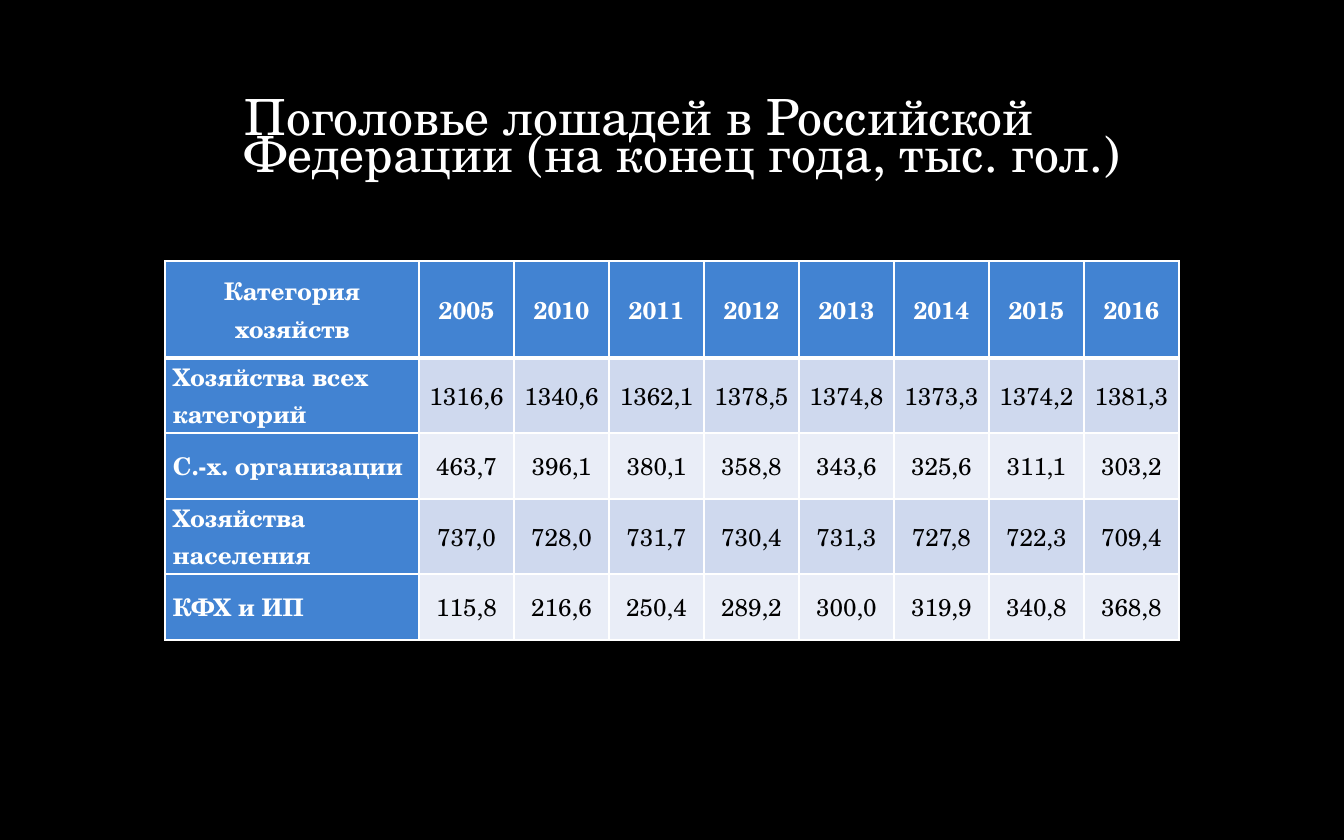
"""Build a slide with a table of horse numbers in Russia by farm category."""
import lxml.etree
import pptx
import pptx.dml.color
import pptx.enum.text
import pptx.oxml.ns
import pptx.util

EMU_PER_PX = 914400 / 134.4
FONT = "TeX Gyre Schola"
WHITE, BLACK, BLUE = "FFFFFF", "000000", "4283D2"
BANDS = ["CFD9EE", "E9EDF7"]
TITLE = "Поголовье лошадей в Российской Федерации (на конец года, тыс. гол.)"
HERD = [
    ["Категория хозяйств", "2005", "2010", "2011", "2012", "2013", "2014", "2015", "2016"],
    ["Хозяйства всех категорий", "1316,6", "1340,6", "1362,1", "1378,5", "1374,8", "1373,3", "1374,2", "1381,3"],
    ["С.-х. организации", "463,7", "396,1", "380,1", "358,8", "343,6", "325,6", "311,1", "303,2"],
    ["Хозяйства населения", "737,0", "728,0", "731,7", "730,4", "731,3", "727,8", "722,3", "709,4"],
    ["КФХ и ИП", "115,8", "216,6", "250,4", "289,2", "300,0", "319,9", "340,8", "368,8"],
]
COLUMN_WIDTHS = [254] + [95] * 8
ROW_HEIGHTS = [97, 75, 66, 75, 66]


def px(length):
    return pptx.util.Emu(round(length * EMU_PER_PX))


def rgb(value):
    return pptx.dml.color.RGBColor.from_string(value)


def style_font(paragraph, size, color, bold=False):
    font = paragraph.font
    font.name = FONT
    font.size = pptx.util.Pt(size)
    font.bold = bold
    font.color.rgb = rgb(color)


def add_border(cell, side, width):
    properties = cell._tc.get_or_add_tcPr()
    line = lxml.etree.SubElement(properties, pptx.oxml.ns.qn(f"a:ln{side}"), w=str(pptx.util.Pt(width)))
    fill = lxml.etree.SubElement(line, pptx.oxml.ns.qn("a:solidFill"))
    lxml.etree.SubElement(fill, pptx.oxml.ns.qn("a:srgbClr"), val=WHITE)


def fill_cell(cell, text, row, column):
    heading = row == 0 or column == 0
    thick_side = {0: "B", 1: "T"}.get(row)
    for side in "LRTB":
        add_border(cell, side, 3 if side == thick_side else 1)
    cell.fill.solid()
    cell.fill.fore_color.rgb = rgb(BLUE if heading else BANDS[(row - 1) % 2])
    cell.margin_left = cell.margin_right = px(8)
    cell.margin_top = cell.margin_bottom = 0
    cell.vertical_anchor = pptx.enum.text.MSO_ANCHOR.MIDDLE
    cell.text = text
    label = cell.text_frame.paragraphs[0]
    centred = row == 0 or column > 0
    label.alignment = pptx.enum.text.PP_ALIGN.CENTER if centred else pptx.enum.text.PP_ALIGN.LEFT
    style_font(label, 13, WHITE if heading else BLACK, heading)


def set_title(slide):
    title = slide.shapes.title
    title.left, title.top, title.width, title.height = map(px, (231, 47, 909, 140))
    frame = title.text_frame
    frame.text = TITLE
    frame.word_wrap = True
    frame.auto_size = pptx.enum.text.MSO_AUTO_SIZE.NONE
    frame.vertical_anchor = pptx.enum.text.MSO_ANCHOR.BOTTOM
    heading = frame.paragraphs[0]
    heading.alignment = pptx.enum.text.PP_ALIGN.LEFT
    heading.line_spacing = 0.63
    style_font(heading, 26.7, WHITE)


def add_herd_table(slide):
    herd = slide.shapes.add_table(
        len(HERD), len(HERD[0]), px(165), px(261), px(sum(COLUMN_WIDTHS)), px(sum(ROW_HEIGHTS))
    ).table
    for column, width in zip(herd.columns, COLUMN_WIDTHS):
        column.width = px(width)
    for row, height in zip(herd.rows, ROW_HEIGHTS):
        row.height = px(height)
    for row, values in enumerate(HERD):
        for column, text in enumerate(values):
            fill_cell(herd.cell(row, column), text, row, column)


def main():
    deck = pptx.Presentation()
    deck.slide_width, deck.slide_height = px(1344), px(840)
    slide = deck.slides.add_slide(deck.slide_layouts[5])
    slide.background.fill.solid()
    slide.background.fill.fore_color.rgb = rgb(BLACK)
    set_title(slide)
    add_herd_table(slide)
    deck.save("out.pptx")


if __name__ == "__main__":
    main()
